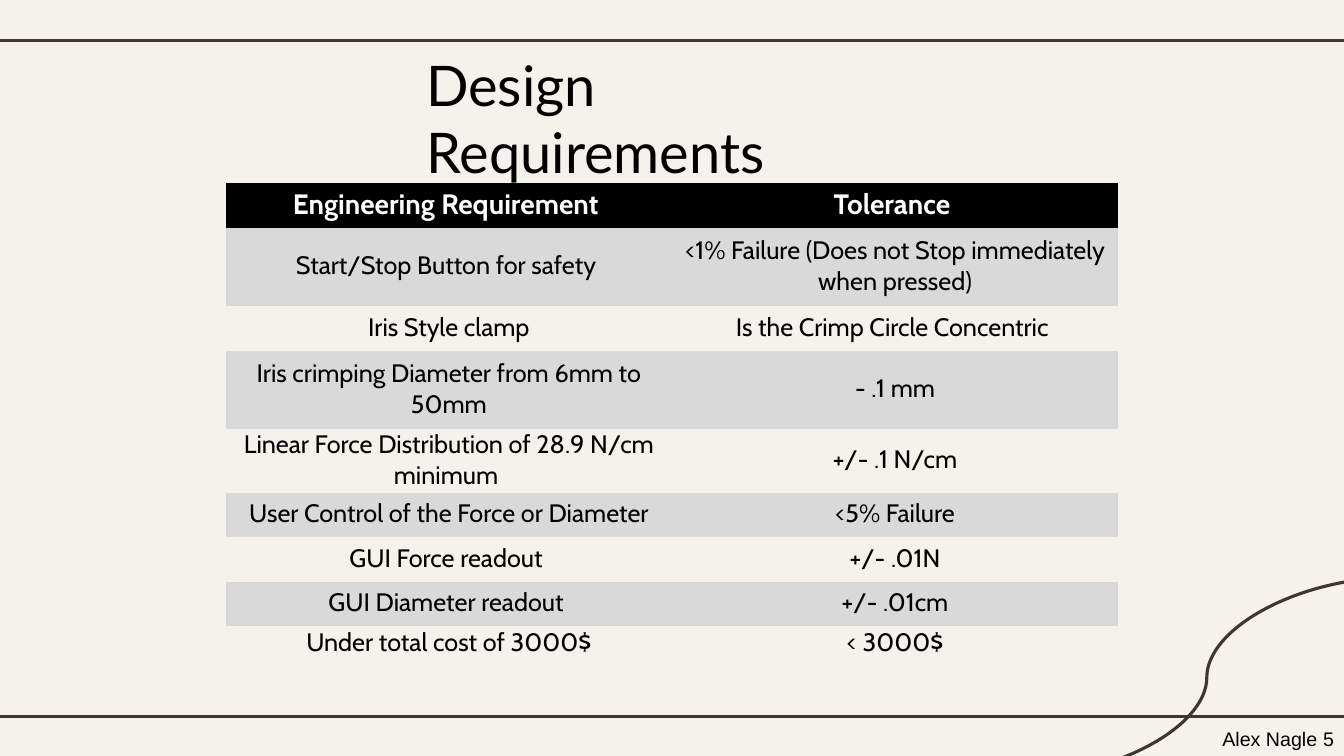
import dataclasses

import lxml.etree
import pptx
import pptx.dml.color
import pptx.enum.shapes
import pptx.enum.text
import pptx.oxml.ns
import pptx.util

Pt = pptx.util.Pt
Inches = pptx.util.Inches
Align = pptx.enum.text.PP_ALIGN
Anchor = pptx.enum.text.MSO_ANCHOR
Wire = pptx.enum.shapes.MSO_CONNECTOR
qn = pptx.oxml.ns.qn


@dataclasses.dataclass
class Theme:
    paper: str = "F5F2EE"
    line: str = "3F3533"
    ink: str = "000000"
    white: str = "FFFFFF"
    band: str = "D9D9D9"
    title: tuple = ("Lato", 40)
    head: tuple = ("Cabin", 20)
    body: tuple = ("Cabin", 18)
    foot: tuple = ("Arial", 14)
    stroke: float = 2.25
    plain: str = "{2D5ABB26-0587-4C30-8999-92F81FD0307C}"  # table style without lines


def rgb(code):
    return pptx.dml.color.RGBColor.from_string(code)


class Page:
    """Places elements by percent of the slide's width and height."""

    def __init__(self, deck, theme):
        self.deck, self.theme = deck, theme
        self.slide = deck.slides.add_slide(deck.slide_layouts[6])
        self.shapes = self.slide.shapes
        back = self.slide.background.fill
        back.solid()
        back.fore_color.rgb = rgb(theme.paper)

    def x(self, share):
        return round(self.deck.slide_width * share / 100)

    def y(self, share):
        return round(self.deck.slide_height * share / 100)

    def area(self, left, top, wide, high):
        return self.x(left), self.y(top), self.x(wide), self.y(high)

    def words(self, frame, text, style, color, align=Align.LEFT, bold=False):
        par = frame.paragraphs[0]
        par.text = text
        par.alignment = align
        par.font.name, size = style
        par.font.size = Pt(size)
        par.font.bold = bold
        par.font.color.rgb = rgb(color)

    def wire(self, kind, start, end):
        wire = self.shapes.add_connector(
            kind, self.x(start[0]), self.y(start[1]), self.x(end[0]), self.y(end[1]))
        wire.line.color.rgb = rgb(self.theme.line)
        wire.line.width = Pt(self.theme.stroke)
        props = wire._element.find(qn("p:spPr"))
        lxml.etree.SubElement(props, qn("a:effectLst"))

    def title(self, text, box):
        frame = self.shapes.add_textbox(*self.area(*box)).text_frame
        frame.word_wrap = True
        frame.vertical_anchor = Anchor.TOP
        frame.margin_top = frame.margin_bottom = Inches(0.1)
        self.words(frame, text, self.theme.title, self.theme.ink)

    def label(self, text, box):
        shape = self.shapes.add_shape(
            pptx.enum.shapes.MSO_SHAPE.RECTANGLE, *self.area(*box))
        shape.shadow.inherit = False
        shape.fill.solid()
        shape.fill.fore_color.rgb = rgb(self.theme.paper)
        shape.line.fill.background()
        shape.text_frame.word_wrap = True
        shape.text_frame.vertical_anchor = Anchor.TOP
        self.words(shape.text_frame, text, self.theme.foot, self.theme.ink, Align.RIGHT)

    def table(self, rows, highs, box):
        look = self.theme
        grid = self.shapes.add_table(len(rows), len(rows[0]), *self.area(*box)).table
        grid.first_row = grid.horz_banding = False
        grid._tbl.tblPr.find(qn("a:tableStyleId")).text = look.plain
        for row, high in zip(grid.rows, highs):
            row.height = self.y(high)
        for r, row in enumerate(rows):
            for c, text in enumerate(row):
                cell = grid.cell(r, c)
                cell.vertical_anchor = Anchor.MIDDLE
                cell.margin_left = cell.margin_right = cell.margin_top = 0
                cell.margin_bottom = Inches(0.03)
                # Black header, then grey on every odd row
                if r % 2 or r == 0:
                    cell.fill.solid()
                    cell.fill.fore_color.rgb = rgb(look.band if r else look.ink)
                else:
                    cell.fill.background()
                self.words(cell.text_frame, text, look.body if r else look.head,
                           look.ink if r else look.white, Align.CENTER, r == 0)


ROWS = [
    ("Engineering Requirement ", "Tolerance "),
    ("Start/Stop Button for safety ",
     "<1% Failure (Does not Stop immediately when pressed)"),
    ("Iris Style clamp", "Is the Crimp Circle Concentric "),
    ("Iris crimping Diameter from 6mm to 50mm", "- .1 mm"),
    ("Linear Force Distribution of 28.9 N/cm minimum ", "+/- .1 N/cm"),
    ("User Control of the Force or Diameter", "<5% Failure"),
    ("GUI Force readout ", "+/- .01N"),
    ("GUI Diameter readout ", "+/- .01cm"),
    ("Under total cost of 3000$", "< 3000$"),
]
ONE, TWO, LAST = 5.87, 10.4, 4.67
HIGHS = [ONE, TWO, ONE, TWO, ONE, ONE, ONE, ONE, LAST]
HIGHS[3:5] = TWO, ONE


def main():
    deck = pptx.Presentation()
    deck.slide_width, deck.slide_height = Inches(13.33), Inches(7.5)
    page = Page(deck, Theme())

    # Frame lines and corner curve
    for level in (5.33, 94.8):
        page.wire(Wire.STRAIGHT, (-0.83, level), (100.83, level))
    page.wire(Wire.CURVE, (103.75, 76.4), (75.84, 102.8))

    # Title and page label
    page.title("Design Requirements", (30.98, 5.33, 37.96, 11.33))
    page.label("Alex Nagle\t5", (89.05, 95.47, 10.95, 4.53))

    # Requirements table
    page.table(ROWS, HIGHS, (16.8, 24.27, 66.4, sum(HIGHS)))

    deck.save("out.pptx")


if __name__ == "__main__":
    main()
